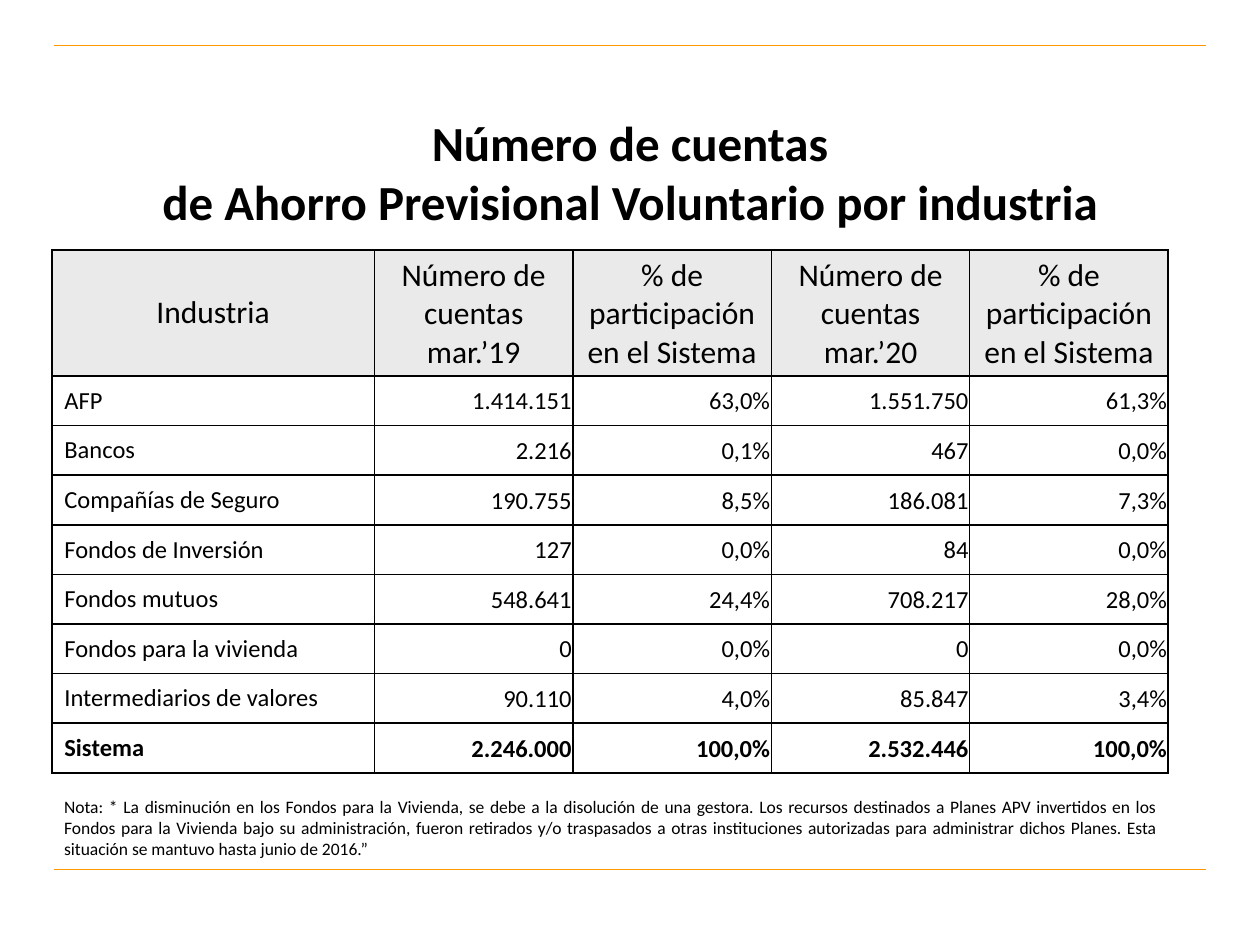
from typing import NamedTuple

from lxml.etree import SubElement
from pptx import Presentation
from pptx.dml.color import RGBColor
from pptx.enum.shapes import MSO_CONNECTOR
from pptx.enum.text import MSO_ANCHOR, PP_ALIGN
from pptx.oxml.ns import qn
from pptx.util import Pt

BLACK = RGBColor(0, 0, 0)
WHITE = RGBColor(255, 255, 255)
HEADER_GRAY = RGBColor(0xEA, 0xEA, 0xEA)
ORANGE = RGBColor(0xFF, 0x99, 0x00)
FONT = "Calibri"
TABLE_LEFT, TABLE_TOP = 29.6, 142.8
INDUSTRY_WIDTH, VALUE_WIDTH = 184.4, 113.4
HEADER_HEIGHT, ROW_HEIGHT = 70, 28.35
TABLE_WIDTH = INDUSTRY_WIDTH + 4 * VALUE_WIDTH


class IndustryRow(NamedTuple):
    industry: str
    accounts_2019: str
    share_2019: str
    accounts_2020: str
    share_2020: str


SHARE_HEADER = "% de participación en el Sistema"
HEADER = IndustryRow("Industria", "Número de cuentas\nmar.’19", SHARE_HEADER,
                     "Número de cuentas\nmar.’20", SHARE_HEADER)
ROWS = [
    IndustryRow("AFP", "1.414.151", "63,0%", "1.551.750", "61,3%"),
    IndustryRow("Bancos", "2.216", "0,1%", "467", "0,0%"),
    IndustryRow("Compañías de Seguro", "190.755", "8,5%", "186.081", "7,3%"),
    IndustryRow("Fondos de Inversión", "127", "0,0%", "84", "0,0%"),
    IndustryRow("Fondos mutuos", "548.641", "24,4%", "708.217", "28,0%"),
    IndustryRow("Fondos para la vivienda", "0", "0,0%", "0", "0,0%"),
    IndustryRow("Intermediarios de valores", "90.110", "4,0%", "85.847", "3,4%"),
    IndustryRow("Sistema", "2.246.000", "100,0%", "2.532.446", "100,0%"),
]
NOTE = (
    "Nota: * La disminución en los Fondos para la Vivienda, se debe a la disolución "
    "de una gestora. Los recursos destinados a Planes APV invertidos en los Fondos "
    "para la Vivienda bajo su administración, fueron retirados y/o traspasados a otras "
    "instituciones autorizadas para administrar dichos Planes. Esta situación se "
    "mantuvo hasta junio de 2016.”"
)


def set_text(frame, text: str, size: float, alignment: PP_ALIGN, bold: bool = False) -> None:
    frame.text = text
    for paragraph in frame.paragraphs:
        paragraph.alignment = alignment
        font = paragraph.font
        font.name, font.size, font.bold = FONT, Pt(size), bold
        font.color.rgb = BLACK


def add_text(slide, left: float, top: float, width: float, height: float,
             text: str, size: float, alignment: PP_ALIGN, anchor: MSO_ANCHOR,
             bold: bool = False) -> None:
    box = slide.shapes.add_textbox(Pt(left), Pt(top), Pt(width), Pt(height))
    frame = box.text_frame
    frame.word_wrap = True
    frame.vertical_anchor = anchor
    set_text(frame, text, size, alignment, bold)


def add_rule(slide, y: float) -> None:
    rule = slide.shapes.add_connector(MSO_CONNECTOR.STRAIGHT, Pt(31), Pt(y), Pt(689), Pt(y))
    rule.line.color.rgb = ORANGE
    rule.line.width = Pt(0.75)
    SubElement(rule._element.spPr, qn("a:effectLst"))


def add_borders(cell) -> None:
    """Draw all four cell sides; they must precede the fill in the cell properties."""
    properties = cell._tc.get_or_add_tcPr()
    for side in ("lnL", "lnR", "lnT", "lnB"):
        line = SubElement(properties, qn(f"a:{side}"), w=str(Pt(1)))
        fill = SubElement(line, qn("a:solidFill"))
        SubElement(fill, qn("a:srgbClr"), val=str(BLACK))


def fill_cell(cell, text: str, row: int, column: int) -> None:
    is_header, is_value = row == 0, row > 0 and column > 0
    cell.vertical_anchor = MSO_ANCHOR.MIDDLE
    if is_value:
        cell.margin_left = cell.margin_right = cell.margin_top = Pt(0.7)
        cell.margin_bottom = Pt(0)
    add_borders(cell)
    if is_value and column % 2 == 0:
        cell.fill.background()
    else:
        cell.fill.solid()
        cell.fill.fore_color.rgb = HEADER_GRAY if is_header else WHITE
    alignment = (PP_ALIGN.CENTER if is_header
                 else PP_ALIGN.RIGHT if is_value else PP_ALIGN.LEFT)
    set_text(cell.text_frame, text, 18 if is_header else 14, alignment, row == len(ROWS))


def add_accounts_table(slide) -> None:
    records = [HEADER, *ROWS]
    height = HEADER_HEIGHT + len(ROWS) * ROW_HEIGHT
    table = slide.shapes.add_table(len(records), len(HEADER), Pt(TABLE_LEFT), Pt(TABLE_TOP),
                                   Pt(TABLE_WIDTH), Pt(height)).table
    table.first_row = table.horz_banding = False
    for index, column in enumerate(table.columns):
        column.width = Pt(VALUE_WIDTH if index else INDUSTRY_WIDTH)
    for row, record in enumerate(records):
        table.rows[row].height = Pt(ROW_HEIGHT if row else HEADER_HEIGHT)
        for column, text in enumerate(record):
            fill_cell(table.cell(row, column), text, row, column)


def main() -> None:
    presentation = Presentation()
    presentation.slide_width, presentation.slide_height = Pt(720), Pt(540)
    slide = presentation.slides.add_slide(presentation.slide_layouts[6])
    for y in (26, 497):
        add_rule(slide, y)
    add_text(slide, 36, 61, 648, 73.4,
             "Número de cuentas\vde Ahorro Previsional Voluntario por industria",
             28, PP_ALIGN.CENTER, MSO_ANCHOR.MIDDLE, bold=True)
    add_accounts_table(slide)
    add_text(slide, TABLE_LEFT, 451.5, TABLE_WIDTH, 44, NOTE, 10,
             PP_ALIGN.JUSTIFY, MSO_ANCHOR.TOP)
    presentation.save("out.pptx")


if __name__ == "__main__":
    main()
